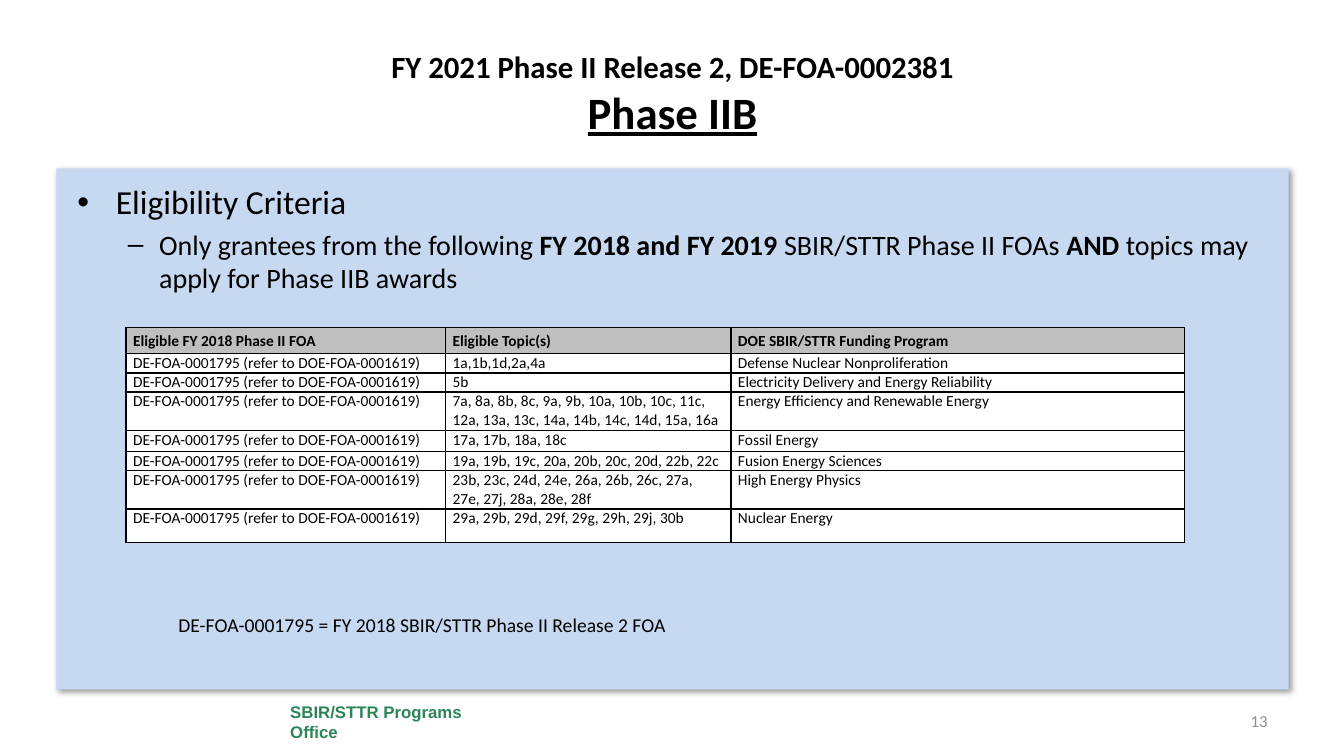
from copy import deepcopy
from dataclasses import dataclass

from lxml.etree import SubElement
from pptx import Presentation
from pptx.dml.color import RGBColor as RGB
from pptx.enum.shapes import MSO_SHAPE as Shape
from pptx.enum.text import MSO_ANCHOR as Anchor, MSO_AUTO_SIZE as AutoSize, PP_ALIGN as Align
from pptx.oxml.ns import qn
from pptx.util import Inches, Pt


@dataclass(frozen=True)
class Theme:
    font: str = "Calibri"
    footer_font: str = "Arial"
    ink: str = "000000"
    paper: str = "FFFFFF"
    panel: str = "C6D9F1"
    header: str = "BFBFBF"
    office: str = "2C8458"
    number: str = "8C8C8C"
    title: int = 32
    subtitle: int = 22
    heading: int = 24
    detail: int = 20
    note: int = 14
    small: int = 12
    cell: int = 11


@dataclass(frozen=True)
class Box:
    left: float
    top: float
    width: float
    height: float

    def inner(self, left, top, width, height):
        """Box offset from this one's corner, in inches."""
        return Box(self.left + left, self.top + top, width, height)

    def emu(self):
        return [Inches(v) for v in (self.left, self.top, self.width, self.height)]


THEME = Theme()
PAGE = Box(0, 0, 13.33, 7.5)
COLUMN_SHARES = (3.17, 2.83, 4.5)
ROW_HEIGHTS = (0.26, 0.19, 0.19, 0.38, 0.21, 0.19, 0.38, 0.33)
FOA = "DE-FOA-0001795 (refer to DOE-FOA-0001619)"
HEADINGS = ("Eligible FY 2018 Phase II FOA", "Eligible Topic(s)", "DOE SBIR/STTR Funding Program")
PROGRAMS = (
    ("1a,1b,1d,2a,4a", "Defense Nuclear Nonproliferation"),
    ("5b", "Electricity Delivery and Energy Reliability"),
    ("7a, 8a, 8b, 8c, 9a, 9b, 10a, 10b, 10c, 11c, 12a, 13a, 13c, 14a, 14b, 14c, 14d, 15a, 16a",
     "Energy Efficiency and Renewable Energy"),
    ("17a, 17b, 18a, 18c", "Fossil Energy"),
    ("19a, 19b, 19c, 20a, 20b, 20c, 20d, 22b, 22c", "Fusion Energy Sciences"),
    ("23b, 23c, 24d, 24e, 26a, 26b, 26c, 27a, 27e, 27j, 28a, 28e, 28f", "High Energy Physics"),
    ("29a, 29b, 29d, 29f, 29g, 29h, 29j, 30b", "Nuclear Energy"),
)


def write(paragraph, text, size, color=THEME.ink, font=THEME.font, bold=False,
          underline=False, align=Align.LEFT):
    """Append one formatted run to a paragraph."""
    paragraph.alignment = align
    run = paragraph.add_run()
    run.text = text
    run.font.size, run.font.name = Pt(size), font
    run.font.bold, run.font.underline = bold, underline
    run.font.color.rgb = RGB.from_string(color)
    return run


def set_bullet(paragraph, mark, margin, hang, level=0):
    paragraph.level = level
    props = paragraph._p.get_or_add_pPr()
    props.set("marL", str(Inches(margin)))
    props.set("indent", str(-Inches(hang)))
    SubElement(props, qn("a:buFont"), typeface=THEME.footer_font)
    SubElement(props, qn("a:buChar"), char=mark)


def add_text_box(slide, box, anchor=Anchor.TOP):
    frame = slide.shapes.add_textbox(*box.emu()).text_frame
    frame.word_wrap = True
    frame.vertical_anchor = anchor
    return frame


def add_block(slide, box, color):
    block = slide.shapes.add_shape(Shape.RECTANGLE, *box.emu())
    block.shadow.inherit = False
    block.fill.solid()
    block.fill.fore_color.rgb = RGB.from_string(color)
    block.line.fill.background()
    return block


def add_panel(slide, box):
    panel = add_block(slide, box, THEME.panel)
    effects = panel._element.spPr.find(qn("a:effectLst"))
    shadow = SubElement(effects, qn("a:outerShdw"), blurRad=str(Pt(4)), dist=str(Pt(3)),
                        dir=str(45 * 60000), algn="tl", rotWithShape="0")
    black = SubElement(shadow, qn("a:srgbClr"), val=THEME.ink)
    SubElement(black, qn("a:alpha"), val="40000")


def add_title(slide, box):
    title = slide.shapes.title
    title.left, title.top, title.width, title.height = box.emu()
    frame = title.text_frame
    frame.auto_size = AutoSize.NONE
    frame.vertical_anchor = Anchor.MIDDLE
    line = frame.paragraphs[0]
    release = write(line, "FY 2021 Phase II Release 2, DE-FOA-0002381", THEME.subtitle,
                    bold=True, align=Align.CENTER)
    # The line break takes the size of the line it ends
    line.add_line_break()
    line._p.find(qn("a:br")).append(deepcopy(release._r.rPr))
    write(line, "Phase IIB", THEME.title, bold=True, underline=True, align=Align.CENTER)


def add_criteria(slide, box):
    frame = add_text_box(slide, box)
    heading = frame.paragraphs[0]
    set_bullet(heading, "•", 0.38, 0.38)
    write(heading, "Eligibility Criteria", THEME.heading)
    rule = frame.add_paragraph()
    set_bullet(rule, "–", 0.81, 0.31, level=1)
    rule.space_before = Pt(0.2 * THEME.detail)
    for text, bold in (("Only grantees from the following ", False),
                       ("FY 2018 and FY 2019 ", True),
                       ("SBIR/STTR Phase II FOAs ", False),
                       ("AND", True),
                       (" topics may apply for Phase IIB awards", False)):
        write(rule, text, THEME.detail, bold=bold)


def set_borders(cell):
    props = cell._tc.get_or_add_tcPr()
    for side in ("lnL", "lnR", "lnT", "lnB"):
        line = SubElement(props, qn(f"a:{side}"), w=str(Pt(1)))
        fill = SubElement(line, qn("a:solidFill"))
        SubElement(fill, qn("a:srgbClr"), val=THEME.ink)


def add_topics_table(slide, box):
    rows = [HEADINGS] + [(FOA, *program) for program in PROGRAMS]
    table = slide.shapes.add_table(len(rows), len(HEADINGS), *box.emu()).table
    table.horz_banding = False
    for column, share in zip(table.columns, COLUMN_SHARES):
        column.width = Inches(box.width * share / sum(COLUMN_SHARES))
    for r, (texts, height) in enumerate(zip(rows, ROW_HEIGHTS)):
        is_header = r == 0
        table.rows[r].height = Inches(height)
        for cell, text in zip(table.rows[r].cells, texts):
            cell.margin_left = cell.margin_right = Inches(0.07)
            cell.margin_top = cell.margin_bottom = 0
            cell.vertical_anchor = Anchor.MIDDLE if is_header else Anchor.TOP
            set_borders(cell)
            cell.fill.solid()
            cell.fill.fore_color.rgb = RGB.from_string(THEME.header if is_header else THEME.paper)
            write(cell.text_frame.paragraphs[0], text, THEME.cell, bold=is_header)


def add_footer(slide, box):
    # Office name
    office = add_block(slide, box.inner(2.78, 0, 2.11, 0.48), THEME.paper).text_frame
    office.word_wrap = True
    office.vertical_anchor = Anchor.MIDDLE
    write(office.paragraphs[0], "SBIR/STTR Programs Office", THEME.small,
          color=THEME.office, font=THEME.footer_font, bold=True)
    # Page number
    number = add_text_box(slide, box.inner(10.56, 0.03, 2.11, 0.4), Anchor.MIDDLE)
    write(number.paragraphs[0], "13", THEME.small, color=THEME.number, align=Align.RIGHT)


def build_eligibility_slide(deck, page):
    slide = deck.slides.add_slide(deck.slide_layouts[5])
    panel = page.inner(0.56, 1.67, 12.22, 5.17)
    add_panel(slide, panel)
    add_title(slide, page.inner(0.67, 0.3, 12, 1.25))
    add_criteria(slide, panel.inner(0.11, 0.08, 12, 1.3))
    add_topics_table(slide, panel.inner(0.69, 1.58, sum(COLUMN_SHARES), sum(ROW_HEIGHTS)))
    note = add_text_box(slide, panel.inner(1.11, 4.36, 6, 0.35))
    write(note.paragraphs[0], "DE-FOA-0001795 = FY 2018 SBIR/STTR Phase II Release 2 FOA", THEME.note)
    add_footer(slide, page.inner(0, 6.92, page.width, 0.48))


def main():
    deck = Presentation()
    deck.slide_width, deck.slide_height = Inches(PAGE.width), Inches(PAGE.height)
    build_eligibility_slide(deck, PAGE)
    deck.save("out.pptx")


if __name__ == "__main__":
    main()
